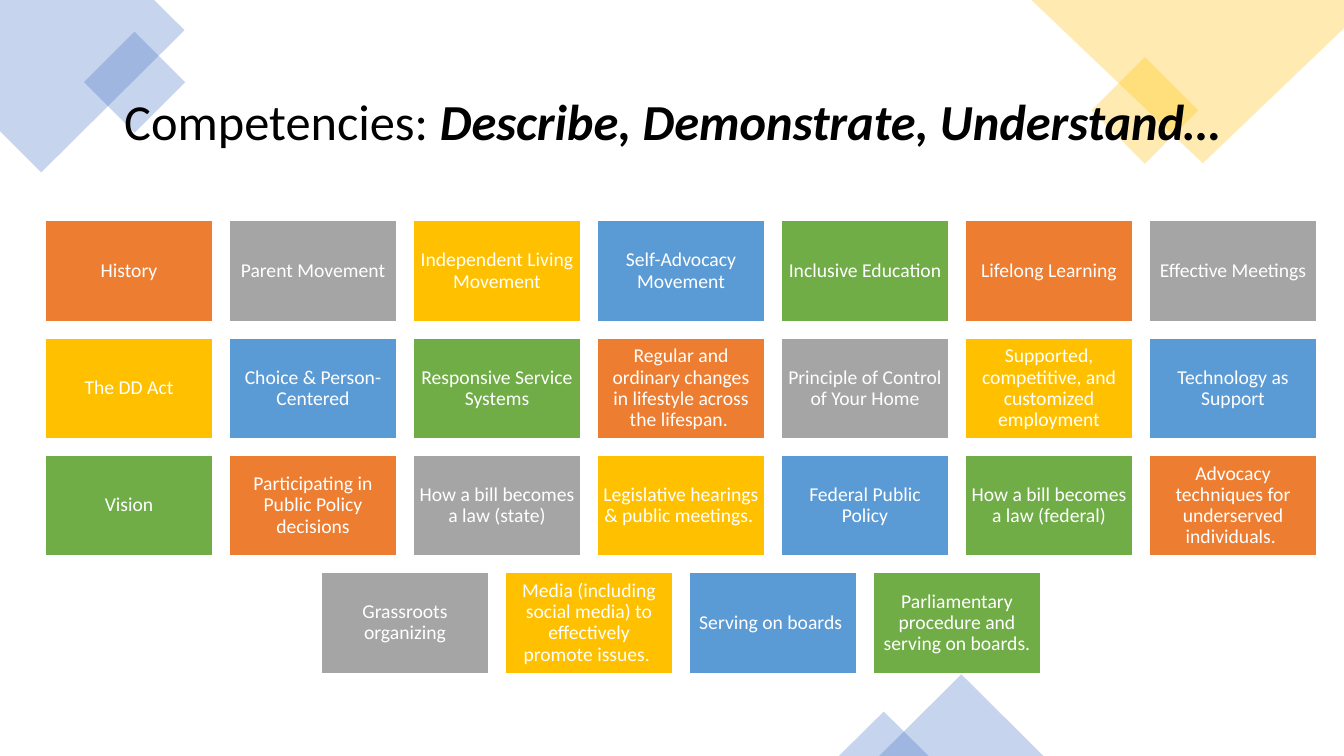
from dataclasses import dataclass

from lxml.etree import SubElement
from pptx import Presentation
from pptx.dml.color import RGBColor
from pptx.enum.shapes import MSO_SHAPE as Shape
from pptx.enum.text import MSO_ANCHOR as Anchor, PP_ALIGN as Align
from pptx.oxml.ns import qn
from pptx.util import Inches, Pt


@dataclass(frozen=True)
class Theme:
    font: str = "Calibri"
    title_size: int = 36
    tile_size: int = 14
    ink: str = "000000"
    white: str = "FFFFFF"
    blue: str = "4472C4"
    gold: str = "FFC000"
    tiles: tuple = ("ED7D31", "A5A5A5", "FFC000", "5B9BD5", "70AD47")
    decor_alpha: int = 30


class SlideBuilder:
    def __init__(self, slide, theme):
        self.shapes = slide.shapes
        self.theme = theme

    def paint(self, shape, color, alpha=100):
        shape.shadow.inherit = False
        shape.fill.solid()
        shape.fill.fore_color.rgb = RGBColor.from_string(color)
        if alpha < 100:
            fill_color = next(shape.element.spPr.iter(qn("a:srgbClr")))
            SubElement(fill_color, qn("a:alpha"), val=str(alpha * 1000))
        shape.line.fill.background()

    def decor(self, kind, box, color, rotation=0):
        shape = self.shapes.add_shape(kind, *map(Inches, box))
        shape.rotation = rotation
        self.paint(shape, color, self.theme.decor_alpha)

    def decor_polygon(self, points, color):
        corners = [(Inches(x), Inches(y)) for x, y in points]
        outline = self.shapes.build_freeform(*corners[0])
        outline.add_line_segments(corners[1:], close=True)
        self.paint(outline.convert_to_shape(), color, self.theme.decor_alpha)

    def add_text(self, shape, runs, size, color, inset):
        frame = shape.text_frame
        frame.word_wrap = True
        frame.vertical_anchor = Anchor.MIDDLE
        frame.margin_left = frame.margin_right = Inches(inset[0])
        frame.margin_top = frame.margin_bottom = Inches(inset[1])
        paragraph = frame.paragraphs[0]
        paragraph.alignment = Align.CENTER
        paragraph.line_spacing = 0.9
        for text, emphasis in runs:
            run = paragraph.add_run()
            run.text = text
            run.font.name = self.theme.font
            run.font.size = Pt(size)
            run.font.bold = run.font.italic = emphasis
            run.font.color.rgb = RGBColor.from_string(color)

    def title(self, box, runs):
        heading = self.shapes.add_textbox(*map(Inches, box))
        self.add_text(heading, runs, self.theme.title_size, self.theme.ink,
                      (0.1, 0.05))

    def tile(self, box, text, color):
        tile = self.shapes.add_shape(Shape.RECTANGLE, *map(Inches, box))
        self.paint(tile, color)
        tile.line.color.rgb = RGBColor.from_string(self.theme.white)
        tile.line.width = Pt(1)
        self.add_text(tile, [(text, False)], self.theme.tile_size,
                      self.theme.white, (0.06, 0.06))


COMPETENCIES = [
    ["History", "Parent Movement", "Independent Living Movement",
     "Self-Advocacy Movement", "Inclusive Education ", "Lifelong Learning",
     "Effective Meetings"],
    ["The DD Act", "Choice & Person-Centered", "Responsive Service Systems",
     "Regular and ordinary changes in lifestyle across the lifespan. ",
     "Principle of Control of Your Home",
     "Supported, competitive, and customized employment",
     "Technology as Support"],
    ["Vision", "Participating in Public Policy decisions",
     "How a bill becomes a law (state)",
     "Legislative hearings & public meetings. ", "Federal Public Policy",
     "How a bill becomes a law (federal)",
     "Advocacy techniques for underserved individuals. "],
    ["Grassroots organizing",
     "Media (including social media) to effectively promote issues. ",
     "Serving on boards ", "Parliamentary procedure and serving on boards."],
]
COLUMNS = 7
TILE_W, TILE_H = 1.66, 1
# First and last tile positions fix the equal steps of the grid
GRID_LEFT, LAST_LEFT = 0.45, 11.4
GRID_TOP, LAST_TOP = 2.19, 5.68
STEP_X = (LAST_LEFT - GRID_LEFT) / (COLUMNS - 1)
STEP_Y = (LAST_TOP - GRID_TOP) / (len(COMPETENCIES) - 1)


def main():
    theme = Theme()
    deck = Presentation()
    deck.slide_width, deck.slide_height = Inches(13.33), Inches(7.5)
    page = SlideBuilder(deck.slides.add_slide(deck.slide_layouts[6]), theme)

    # Corner decoration
    page.decor_polygon([(1.53, 0), (0, 0), (0, 1.3), (0.41, 1.71), (1.83, 0.3)],
                       theme.blue)
    page.decor(Shape.RECTANGLE, (0.98, 0.46, 0.71, 0.71), theme.blue, 315)
    page.decor(Shape.RECTANGLE, (10.98, 0.72, 0.75, 0.75), theme.gold, 315)
    page.decor_polygon([(13.33, 0), (10.23, 0), (11.93, 1.62), (13.33, 0.28)],
                       theme.gold)
    page.decor(Shape.ISOSCELES_TRIANGLE, (8.72, 6.69, 1.63, 0.81), theme.blue)
    page.decor(Shape.ISOSCELES_TRIANGLE, (8.32, 7.06, 0.89, 0.44), theme.blue)

    # Title
    page.title((0.92, 0.61, 11.5, 1.24),
               [("Competencies: ", False),
                ("Describe, Demonstrate, Understand…", True)])

    # Competency tiles: short rows are centred, colours run on in reading order
    for row, names in enumerate(COMPETENCIES):
        row_left = GRID_LEFT + (COLUMNS - len(names)) * STEP_X / 2
        for column, name in enumerate(names):
            color = theme.tiles[(row * COLUMNS + column) % len(theme.tiles)]
            page.tile((row_left + column * STEP_X, GRID_TOP + row * STEP_Y,
                       TILE_W, TILE_H), name, color)

    deck.save("out.pptx")


if __name__ == "__main__":
    main()
